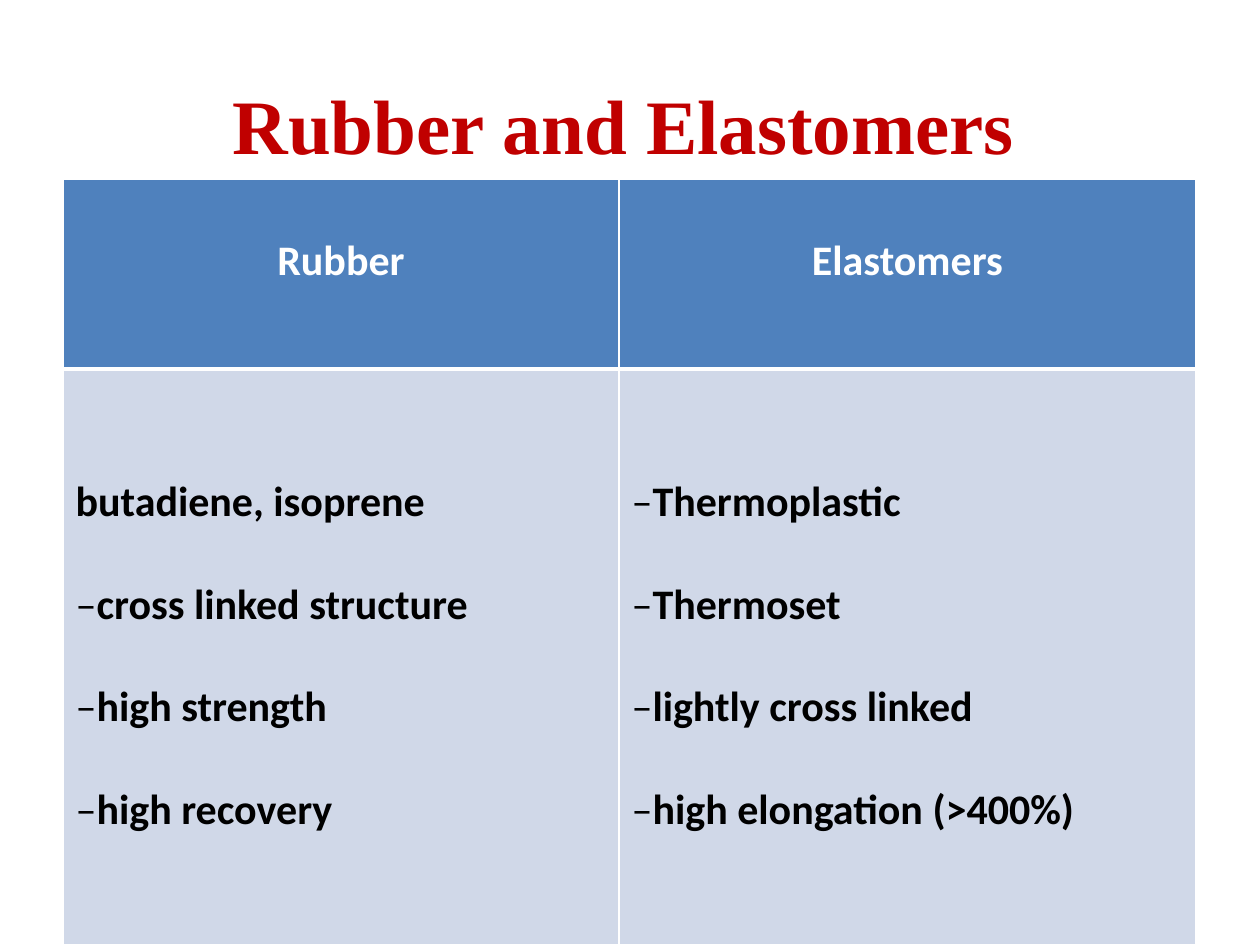
"""Build a slide that compares rubber and elastomers in a two-column table."""
from lxml import etree
from pptx import Presentation
from pptx import util as u
from pptx.dml.color import RGBColor
from pptx.enum import text
from pptx.oxml.ns import qn

RED = RGBColor(0xC0, 0x00, 0x00)
BLUE = RGBColor(0x4F, 0x81, 0xBD)
PALE = RGBColor(0xD0, 0xD8, 0xE8)
WHITE = RGBColor(0xFF, 0xFF, 0xFF)
BLACK = RGBColor(0x00, 0x00, 0x00)

COLUMNS = [
    ("Rubber", 556, ["butadiene, isoprene", "–cross linked structure", "–high strength", "–high recovery"]),
    ("Elastomers", 577, ["–Thermoplastic", "–Thermoset", "–lightly cross linked", "–high elongation (>400%)"]),
]


def px(n):
    return u.Emu(round(n * 914400 / 126))


def add_run(p, words, font, size, color, bold=True):
    r = p.add_run()
    r.text = words
    r.font.name = font
    r.font.size = u.Pt(size)
    r.font.bold = bold
    r.font.color.rgb = color


prs = Presentation()
prs.slide_width, prs.slide_height = px(1260), px(945)
s = prs.slides.add_slide(prs.slide_layouts[5])

sp = s.shapes.title
sp.left, sp.top, sp.width, sp.height = px(220), px(63), px(820), px(106)
tf = sp.text_frame
tf.auto_size = text.MSO_AUTO_SIZE.NONE
tf.vertical_anchor = text.MSO_ANCHOR.TOP
tf.margin_top, tf.margin_bottom = px(15), 0
p = tf.paragraphs[0]
p.alignment = text.PP_ALIGN.LEFT
add_run(p, "Rubber and Elastomers", "Times New Roman", 44, RED)

table = s.shapes.add_table(2, 2, px(63), px(179), px(1133), px(766)).table
table.rows[0].height, table.rows[1].height = px(190), px(576)

for col, (heading, width, points) in enumerate(COLUMNS):
    table.columns[col].width = px(width)
    header, body = table.cell(0, col), table.cell(1, col)
    header.margin_top, body.margin_top = px(57), px(108)

    p = header.text_frame.paragraphs[0]
    p.alignment = text.PP_ALIGN.CENTER
    add_run(p, heading, "Calibri", 24, WHITE)

    tf = body.text_frame
    for i, point in enumerate(points):
        p = tf.add_paragraph() if i else tf.paragraphs[0]
        if i:
            p.space_before = u.Pt(29.3)
        if point.startswith("–"):
            add_run(p, "–", "Calibri", 24, BLACK, bold=False)
        add_run(p, point.lstrip("–"), "Calibri", 24, BLACK)

    for cell, fill, bottom, top in ((header, BLUE, 3, 1), (body, PALE, 1, 3)):
        cell.vertical_anchor = text.MSO_ANCHOR.TOP
        cell.fill.solid()
        cell.fill.fore_color.rgb = fill
        tc_pr = cell._tc.get_or_add_tcPr()
        for i, (side, points_wide) in enumerate((("L", 1), ("R", 1), ("T", top), ("B", bottom))):
            ln = etree.Element(qn("a:ln" + side), w=str(u.Pt(points_wide)))
            solid = etree.SubElement(ln, qn("a:solidFill"))
            etree.SubElement(solid, qn("a:srgbClr"), val=str(WHITE))
            tc_pr.insert(i, ln)

prs.save("out.pptx")
